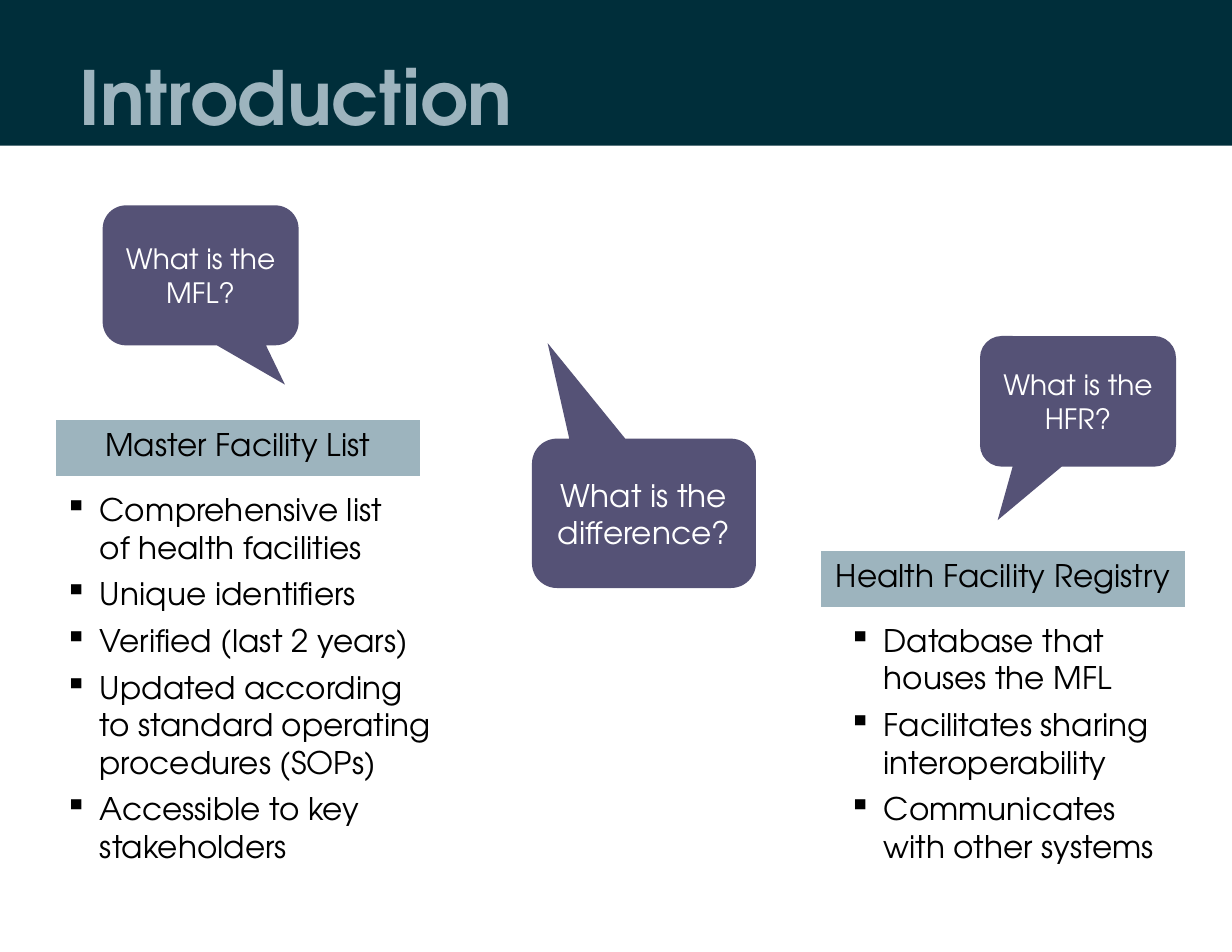
import dataclasses
import typing

import lxml.etree
import pptx
import pptx.dml.color
import pptx.enum.shapes
import pptx.enum.text
import pptx.oxml.ns
import pptx.util

Pt = pptx.util.Pt
Kind = pptx.enum.shapes.MSO_SHAPE
Align = pptx.enum.text.PP_ALIGN
Anchor = pptx.enum.text.MSO_ANCHOR

FONT = "TeX Gyre Adventor"
NAVY, STEEL, PLUM = "002E3A", "9DB4BE", "555276"
BLACK, WHITE = "000000", "FFFFFF"


@dataclasses.dataclass
class Box:
    left: float
    top: float
    width: float
    height: float


@dataclasses.dataclass
class Bar:
    box: Box
    text: str


@dataclasses.dataclass
class Points:
    box: Box
    items: list[str]
    lead: float


@dataclasses.dataclass
class Bubble:
    box: Box
    text: str
    size: float
    tip: tuple[float, float]


BARS = [
    Bar(Box(36, 270, 234, 36), "Master Facility List"),
    Bar(Box(528, 354, 234, 36), "Health Facility Registry"),
]
LISTS = [
    Points(Box(30, 312, 258, 222), [
        "Comprehensive list\vof health facilities",
        "Unique identifiers",
        "Verified (last 2 years)",
        "Updated according to standard operating procedures (SOPs)",
        "Accessible to key stakeholders",
    ], 24),
    Points(Box(534, 396, 234, 204), [
        "Database that houses the MFL",
        "Facilitates sharing interoperability",
        "Communicates with other systems",
    ], 6),
]
BUBBLES = [
    Bubble(Box(66, 132, 126, 90), "What is the MFL?", 18, (0.43, 0.78)),
    Bubble(Box(630, 216, 126, 84), "What is the HFR?", 18, (-0.41, 0.91)),
    Bubble(Box(342, 282, 144, 96), "What is the difference?", 20, (-0.43, -1.14)),
]


def color(code: str) -> pptx.dml.color.RGBColor:
    return pptx.dml.color.RGBColor.from_string(code)


def shape(slide: typing.Any, kind: Kind, box: Box, fill: str = "") -> typing.Any:
    part = slide.shapes.add_shape(
        kind, Pt(box.left), Pt(box.top), Pt(box.width), Pt(box.height))
    part.shadow.inherit = False
    part.line.fill.background()
    if fill:
        part.fill.solid()
        part.fill.fore_color.rgb = color(fill)
    else:
        part.fill.background()
    part.text_frame.word_wrap = True
    part.text_frame.vertical_anchor = Anchor.TOP
    return part


def style(para: typing.Any, size: float, code: str, align: Align,
          space: float = 0, bold: bool = False) -> None:
    para.alignment = align
    para.space_before = Pt(space)
    for run in para.runs:
        run.font.name = FONT
        run.font.size = Pt(size)
        run.font.bold = bold
        run.font.color.rgb = color(code)


def bullet(para: typing.Any) -> None:
    props = para._p.get_or_add_pPr()
    props.set("marL", str(Pt(27)))
    props.set("indent", str(-Pt(22.5)))
    mark = lxml.etree.SubElement(props, pptx.oxml.ns.qn("a:buChar"))
    mark.set("char", "▪")


def draw_bar(slide: typing.Any, bar: Bar) -> None:
    frame = shape(slide, Kind.FLOWCHART_PROCESS, bar.box, STEEL).text_frame
    frame.text = bar.text
    style(frame.paragraphs[0], 20, BLACK, Align.CENTER, 24)


def draw_list(slide: typing.Any, points: Points) -> None:
    frame = shape(slide, Kind.FLOWCHART_PROCESS, points.box).text_frame
    for i, item in enumerate(points.items):
        para = frame.add_paragraph() if i else frame.paragraphs[0]
        para.text = item
        style(para, 20, BLACK, Align.LEFT, 6 if i else points.lead)
        bullet(para)


def draw_bubble(slide: typing.Any, bubble: Bubble) -> None:
    part = shape(slide, Kind.ROUNDED_RECTANGULAR_CALLOUT, bubble.box, PLUM)
    part.adjustments[0], part.adjustments[1] = bubble.tip
    frame = part.text_frame
    frame.vertical_anchor = Anchor.MIDDLE
    frame.text = bubble.text
    style(frame.paragraphs[0], bubble.size, WHITE, Align.CENTER)


def main() -> None:
    deck = pptx.Presentation()
    deck.slide_width, deck.slide_height = Pt(792), Pt(612)
    slide = deck.slides.add_slide(deck.slide_layouts[5])

    # Title over its band
    title = slide.shapes.title
    title.left, title.top = Pt(44), Pt(29)
    title.width, title.height = Pt(687), Pt(90)
    frame = title.text_frame
    frame.text = "Introduction"
    frame.vertical_anchor = Anchor.TOP
    style(frame.paragraphs[0], 48, STEEL, Align.LEFT, bold=True)
    band = shape(slide, Kind.RECTANGLE, Box(0, 0, 792, 93.6), NAVY)
    title.element.addprevious(band.element)

    # Headed lists
    for bar, points in zip(BARS, LISTS):
        draw_bar(slide, bar)
        draw_list(slide, points)

    # Questions
    for bubble in BUBBLES:
        draw_bubble(slide, bubble)

    deck.save("out.pptx")


if __name__ == "__main__":
    main()
